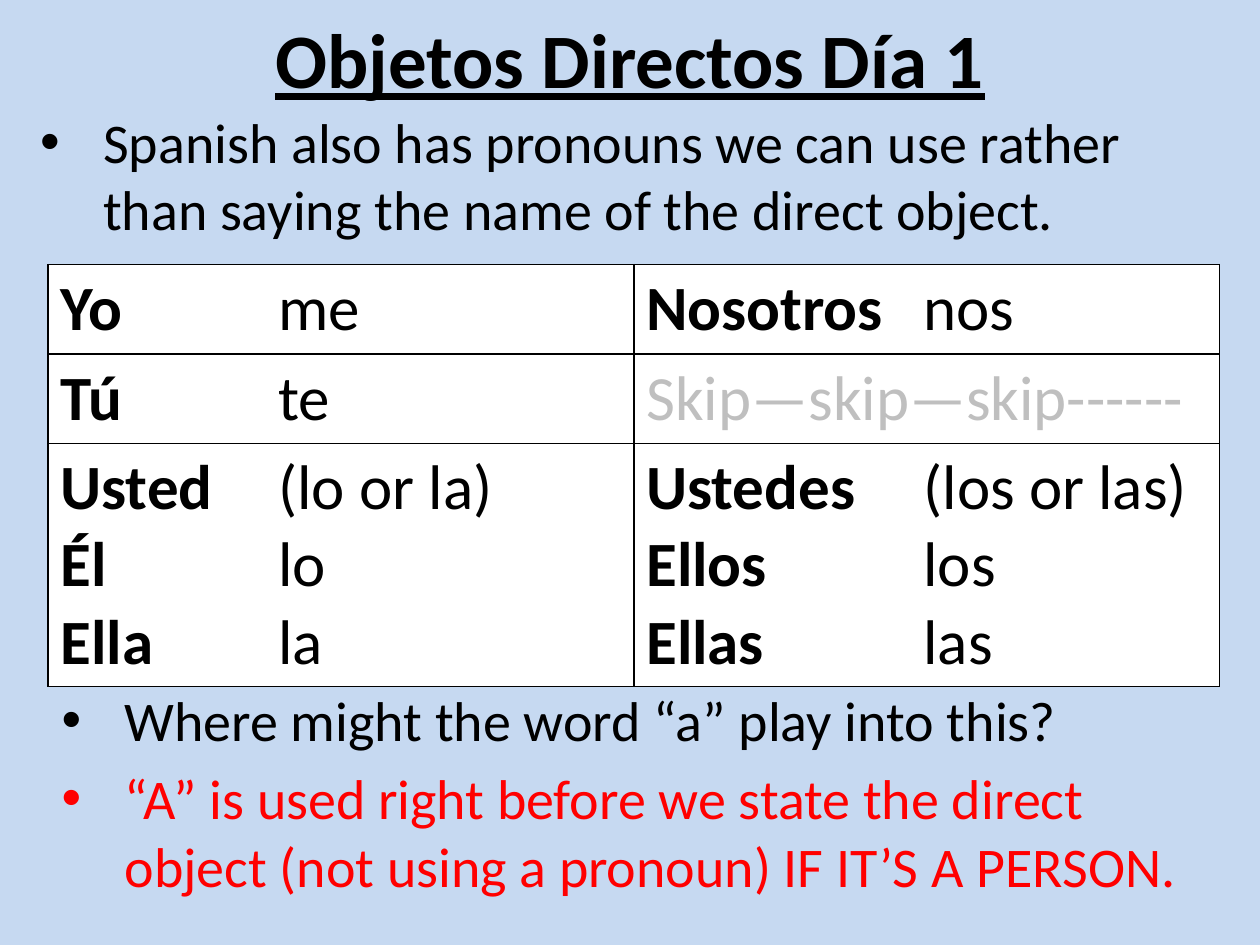
from lxml.etree import SubElement
from pptx import Presentation
from pptx.dml.color import RGBColor
from pptx.enum.text import MSO_ANCHOR, PP_ALIGN
from pptx.oxml.ns import qn
from pptx.util import Inches, Pt

FONT = "Calibri"
COLORS = {"background": "C6D9F1", "text": "000000", "answer": "FF0000",
          "skipped": "BFBFBF", "cell": "FFFFFF", "border": "000000"}

TITLE = "Objetos Directos Día 1"
INTRO = [("Spanish also has pronouns we can use rather than saying "
          "the name of the direct object.", "text")]
QUESTIONS = [
    ("Where might the word “a” play into this?", "text"),
    ("“A” is used right before we state the direct object "
     "(not using a pronoun) IF IT’S A PERSON.", "answer"),
]
# Each cell lists (subject, object pronoun) lines; a plain string is a skipped cell.
PRONOUNS = [
    [[("Yo", "me")], [("Nosotros", "nos")]],
    [[("Tú", "te")], "Skip—skip—skip------"],
    [[("Usted", "(lo or la)"), ("Él", "lo"), ("Ella", "la")],
     [("Ustedes", "(los or las)"), ("Ellos", "los"), ("Ellas", "las")]],
]
ROW_HEIGHTS = [0.71, 0.71, 1.93]
COLUMN_WIDTH = 4.65
PRONOUN_TABS = [1.73, 2.2]


def rgb(name):
    return RGBColor.from_string(COLORS[name])


def set_font(font, size, color="text"):
    font.name = FONT
    font.size = Pt(size)
    font.color.rgb = rgb(color)


def add_text_frame(slide, left, top, width, height):
    frame = slide.shapes.add_textbox(
        Inches(left), Inches(top), Inches(width), Inches(height)).text_frame
    frame.word_wrap = True
    return frame


def paragraphs_for(frame, items):
    """Pair each item with its own paragraph, using the existing first one."""
    for index, item in enumerate(items):
        yield frame.add_paragraph() if index else frame.paragraphs[0], item


def add_bullets(slide, box, bullets):
    frame = add_text_frame(slide, *box)
    for paragraph, (text, color) in paragraphs_for(frame, bullets):
        paragraph.text = text
        properties = paragraph._p.get_or_add_pPr()
        properties.set("marL", str(Inches(0.5)))
        properties.set("indent", str(Inches(-0.5)))
        SubElement(properties, qn("a:buFont"), typeface="Arial")
        SubElement(properties, qn("a:buChar"), char="•")
        paragraph.space_before = Pt(6.4)
        set_font(paragraph.font, 32, color)


def style_cell(cell):
    properties = cell._tc.get_or_add_tcPr()
    for side in ("lnL", "lnR", "lnT", "lnB"):
        line = SubElement(properties, qn(f"a:{side}"), w=str(Pt(1)))
        fill = SubElement(line, qn("a:solidFill"))
        SubElement(fill, qn("a:srgbClr"), val=COLORS["border"])
    cell.fill.solid()
    cell.fill.fore_color.rgb = rgb("cell")


def fill_cell(cell, content, tab):
    if isinstance(content, str):
        paragraph = cell.text_frame.paragraphs[0]
        paragraph.text = content
        set_font(paragraph.font, 36, "skipped")
        return
    for paragraph, (subject, pronoun) in paragraphs_for(cell.text_frame, content):
        tabs = SubElement(paragraph._p.get_or_add_pPr(), qn("a:tabLst"))
        SubElement(tabs, qn("a:tab"), pos=str(Inches(tab)), algn="l")
        set_font(paragraph.font, 36)
        subject_run = paragraph.add_run()
        subject_run.text = subject
        subject_run.font.bold = True
        paragraph.add_run().text = "\t" + pronoun


def add_pronoun_table(slide, left, top):
    columns = len(PRONOUN_TABS)
    table = slide.shapes.add_table(
        len(PRONOUNS), columns, Inches(left), Inches(top),
        Inches(COLUMN_WIDTH * columns), Inches(sum(ROW_HEIGHTS))).table
    table.first_row = table.horz_banding = False
    for column in table.columns:
        column.width = Inches(COLUMN_WIDTH)
    for r, (height, contents) in enumerate(zip(ROW_HEIGHTS, PRONOUNS)):
        table.rows[r].height = Inches(height)
        for c, (content, tab) in enumerate(zip(contents, PRONOUN_TABS)):
            style_cell(table.cell(r, c))
            fill_cell(table.cell(r, c), content, tab)


def main():
    prs = Presentation()
    prs.slide_width, prs.slide_height = Inches(10), Inches(7.5)
    slide = prs.slides.add_slide(prs.slide_layouts[6])
    slide.background.fill.solid()
    slide.background.fill.fore_color.rgb = rgb("background")

    title_frame = add_text_frame(slide, 0, 0, 10, 0.92)
    title_frame.vertical_anchor = MSO_ANCHOR.MIDDLE
    title = title_frame.paragraphs[0]
    title.text = TITLE
    title.alignment = PP_ALIGN.CENTER
    set_font(title.font, 44)
    title.font.bold = title.font.underline = True

    add_bullets(slide, (0.22, 0.8, 9.47, 1.38), INTRO)
    add_pronoun_table(slide, 0.38, 2.1)
    add_bullets(slide, (0.39, 5.39, 9.3, 2.11), QUESTIONS)
    prs.save("out.pptx")


if __name__ == "__main__":
    main()
